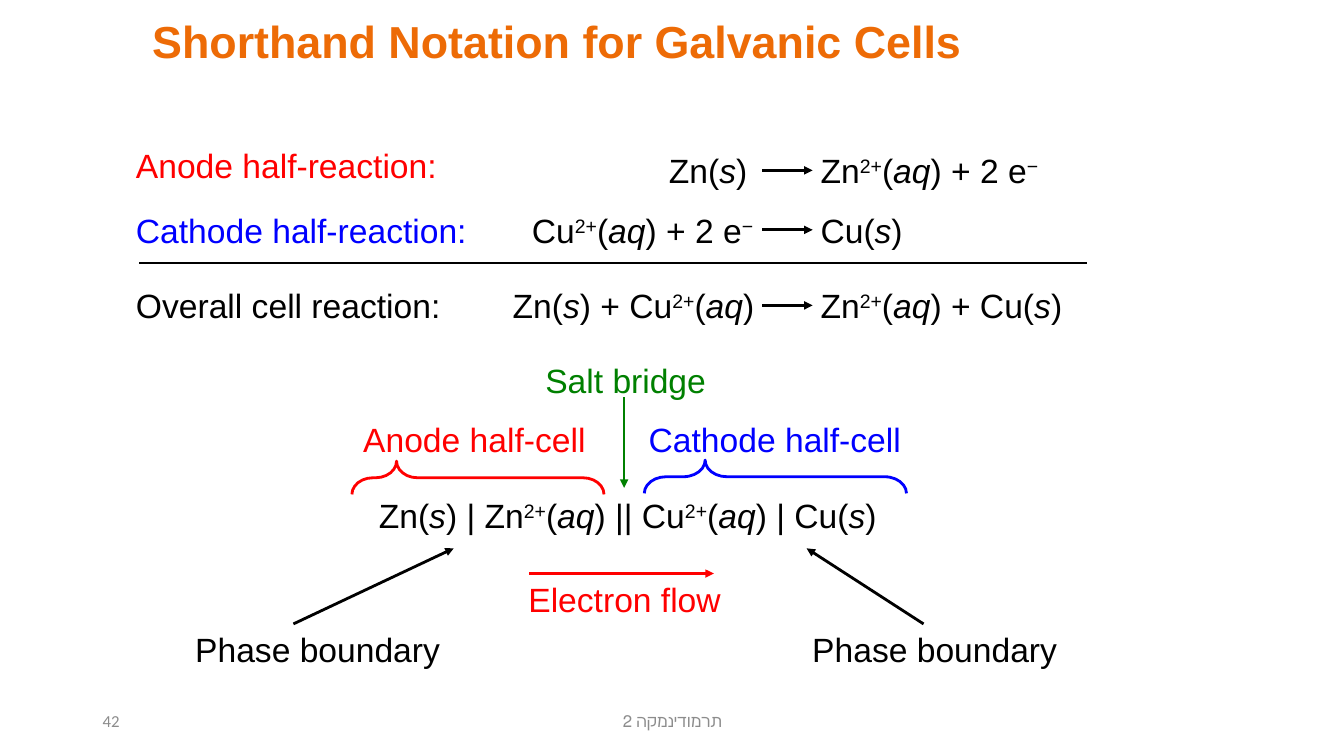
from lxml.etree import SubElement
from pptx import Presentation
from pptx.dml.color import RGBColor
from pptx.enum.shapes import MSO_CONNECTOR, MSO_SHAPE
from pptx.enum.text import MSO_ANCHOR, PP_ALIGN
from pptx.oxml.ns import qn
from pptx.util import Inches, Pt

BLACK, RED, BLUE, GREEN = "000000", "FF0000", "0000FF", "008000"
ORANGE, GREY = "ED6B06", "8C8C8C"
LEFT, CENTER, RIGHT = PP_ALIGN.LEFT, PP_ALIGN.CENTER, PP_ALIGN.RIGHT
ROW = 0.5
LABEL_X, ARROW_X, PRODUCT_X = 1.25, 7.56, 8.04
BRACE_DEPTH = 0.33

TITLE = "Shorthand Notation for Galvanic Cells"
COURSE = "תרמודינמקה 2"
PAGE = "42"

# Markup: *italic* and ^superscript^
REACTIONS = [
    {"label": ("Anode half-reaction:", RED, 1.39, 3.22), "top": 1.44,
     "reactants": ("Zn(*s*)", 6.52, 0.99),
     "products": ("Zn^2+^(*aq*) + 2 e^−^", 2.42)},
    {"label": ("Cathode half-reaction:", BLUE, 2.03, 3.52), "top": 2.03,
     "reactants": ("Cu^2+^(*aq*) + 2 e^−^", 5.11, 2.46),
     "products": ("Cu(*s*)", 1.03)},
    {"label": ("Overall cell reaction:", BLACK, 2.78, 3.25), "top": 2.78,
     "reactants": ("Zn(*s*) + Cu^2+^(*aq*)", 4.92, 2.66),
     "products": ("Zn^2+^(*aq*) + Cu(*s*)", 2.66)},
]
CELL_LABELS = [
    ("Zn(*s*) | Zn^2+^(*aq*) || Cu^2+^(*aq*) | Cu(*s*)", BLACK, 3.6, 4.86, 5.25),
    ("Salt bridge", GREEN, 5.3, 3.52, 1.81),
    ("Anode half-cell", RED, 3.49, 4.11, 2.43),
    ("Cathode half-cell", BLUE, 6.32, 4.11, 2.73),
    ("Electron flow", RED, 5.13, 5.69, 2.13),
    ("Phase boundary", BLACK, 1.82, 6.19, 2.66),
    ("Phase boundary", BLACK, 7.94, 6.19, 2.66),
]
CELL_ARROWS = [
    (GREEN, (6.19, 3.94), (6.19, 4.84)),
    (RED, (5.25, 5.69), (7.08, 5.69)),
    (BLACK, (2.91, 6.19), (4.5, 5.44)),
    (BLACK, (9.16, 6.19), (8, 5.44)),
]
BRACES = [
    (RED, 4.74, 4.74, 2.5, (0.632, 0.823)),
    (BLUE, 7.69, 4.73, 2.6, (0.657, 0.768)),
]
SUM_LINE = ((1.38, 2.61), (10.78, 2.61))


def rgb(color):
    return RGBColor.from_string(color)


def add_text(slide, markup, color, left, top, width, height=ROW, align=LEFT,
             anchor=MSO_ANCHOR.TOP, size=24, font="Arial", bold=False, wrap=False):
    box = slide.shapes.add_textbox(*map(Inches, (left, top, width, height)))
    frame = box.text_frame
    frame.word_wrap = wrap
    frame.vertical_anchor = anchor
    paragraph = frame.paragraphs[0]
    paragraph.alignment = align
    for i, part in enumerate(markup.split("*")):
        for j, piece in enumerate(part.split("^")):
            if not piece:
                continue
            run = paragraph.add_run()
            run.text = piece
            run.font.size, run.font.name = Pt(size), font
            run.font.bold, run.font.italic = bold, i % 2 == 1
            run.font.color.rgb = rgb(color)
            if j % 2:
                run.font._element.set("baseline", "30000")
    return frame


def add_line(slide, color, start, end, arrow=True):
    line = slide.shapes.add_connector(
        MSO_CONNECTOR.STRAIGHT, *map(Inches, (*start, *end)))
    line.line.color.rgb = rgb(color)
    line.line.width = Pt(2)
    if arrow:
        SubElement(line.line._get_or_add_ln(), qn("a:tailEnd"), type="triangle")
    SubElement(line._element.spPr, qn("a:effectLst"))


def add_brace(slide, color, center_x, center_y, span, adjustments):
    brace = slide.shapes.add_shape(
        MSO_SHAPE.LEFT_BRACE, Inches(center_x - BRACE_DEPTH / 2),
        Inches(center_y - span / 2), Inches(BRACE_DEPTH), Inches(span))
    brace.rotation = 90
    brace.shadow.inherit = False
    brace.fill.background()
    brace.line.color.rgb = rgb(color)
    brace.line.width = Pt(2)
    for index, value in enumerate(adjustments):
        brace.adjustments[index] = value


def add_reaction(slide, reaction):
    label, color, label_top, label_width = reaction["label"]
    reactants, left, width = reaction["reactants"]
    products, product_width = reaction["products"]
    top = reaction["top"]
    middle = top + ROW / 2
    add_text(slide, label, color, LABEL_X, label_top, label_width)
    add_text(slide, reactants, BLACK, left, top, width, align=RIGHT)
    add_text(slide, products, BLACK, PRODUCT_X, top, product_width)
    add_line(slide, BLACK, (ARROW_X, middle), (ARROW_X + 0.5, middle))


def main():
    """Build the galvanic cell notation slide."""
    deck = Presentation()
    deck.slide_width, deck.slide_height = Inches(13.33), Inches(7.5)
    slide = deck.slides.add_slide(deck.slide_layouts[6])

    title = add_text(slide, TITLE, ORANGE, 1.01, 0.09, 10, 0.64,
                     size=32, bold=True, wrap=True)
    title.margin_left = Inches(0.5)
    footer = {"height": 0.4, "anchor": MSO_ANCHOR.MIDDLE, "size": 12,
              "font": "Calibri", "wrap": True}
    course = add_text(slide, COURSE, GREY, 4.42, 6.95, 4.5, align=CENTER, **footer)
    course.paragraphs[0]._p.get_or_add_pPr().set("rtl", "1")
    add_text(slide, PAGE, GREY, 0.92, 6.95, 3, **footer)

    for reaction in REACTIONS:
        add_reaction(slide, reaction)
    add_line(slide, BLACK, *SUM_LINE, arrow=False)
    for label in CELL_LABELS:
        add_text(slide, *label, align=CENTER, anchor=MSO_ANCHOR.MIDDLE)
    for arrow in CELL_ARROWS:
        add_line(slide, *arrow)
    for brace in BRACES:
        add_brace(slide, *brace)

    deck.save("out.pptx")


if __name__ == "__main__":
    main()
